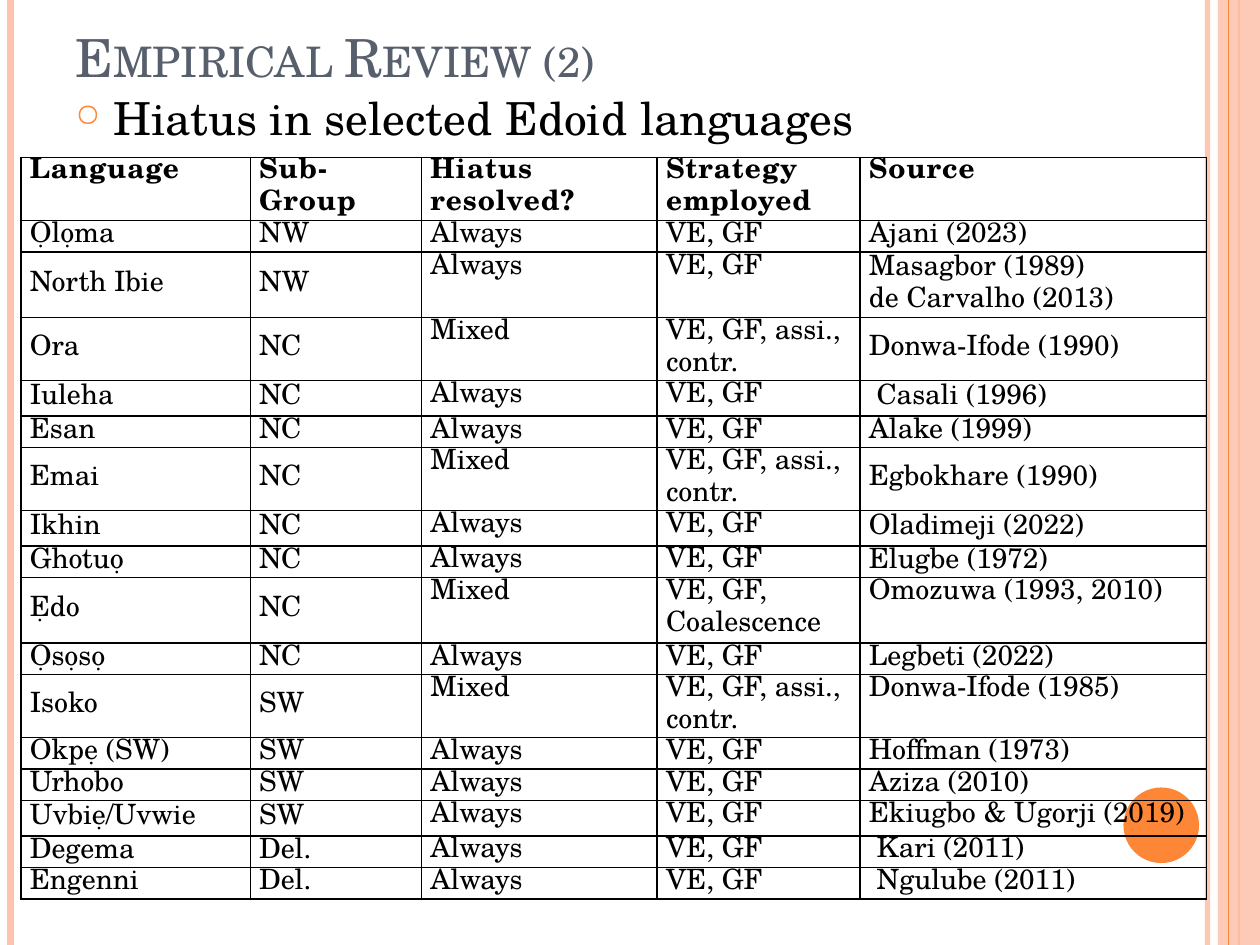
from lxml import etree
from pptx import Presentation, util as u
from pptx.dml.color import RGBColor
from pptx.enum import shapes, text
from pptx.oxml import ns

ORANGE = RGBColor(0xFE, 0x86, 0x37)
PEACH = RGBColor(0xFE, 0xC3, 0xAE)
SLATE = RGBColor(0x57, 0x5F, 0x6D)
BLACK = RGBColor(0, 0, 0)
FONT = "TeX Gyre Schola"
MIDDLE, TOP = text.MSO_ANCHOR.MIDDLE, text.MSO_ANCHOR.TOP

# The slide is a grid of 120 columns by 90 rows of equal squares
COLS, ROWS = 120, 90
GRID = u.Inches(10) // COLS

HEADINGS = ["Language", "Sub-Group", "Hiatus resolved?", "Strategy employed", "Source"]
PLAIN, ASSIMILATING = ("Always", "VE, GF"), ("Mixed", "VE, GF, assi., contr.")
COALESCING = ("Mixed", "VE, GF, Coalescence")
LANGUAGES = [
    # language, sub-group, hiatus and strategy, source, row height
    ("Ọlọma", "NW", PLAIN, "Ajani (2023)", 0.25),
    ("North Ibie", "NW", PLAIN, "Masagbor (1989)\nde Carvalho (2013)", 0.52),
    ("Ora", "NC", ASSIMILATING, "Donwa-Ifode (1990)", 0.5),
    ("Iuleha", "NC", PLAIN, " Casali (1996)", 0.28),
    ("Esan", "NC", PLAIN, "Alake (1999)", 0.25),
    ("Emai", "NC", ASSIMILATING, "Egbokhare (1990)", 0.5),
    ("Ikhin", "NC", PLAIN, "Oladimeji (2022)", 0.28),
    ("Ghotuọ", "NC", PLAIN, "Elugbe (1972)", 0.25),
    ("Ẹdo", "NC", COALESCING, "Omozuwa (1993, 2010)", 0.52),
    ("Ọsọsọ", "NC", PLAIN, "Legbeti (2022)", 0.25),
    ("Isoko", "SW", ASSIMILATING, "Donwa-Ifode (1985)", 0.5),
    ("Okpẹ (SW)", "SW", PLAIN, "Hoffman (1973)", 0.25),
    ("Urhobo", "SW", PLAIN, "Aziza (2010)", 0.25),
    ("Uvbiẹ/Uvwie", "SW", PLAIN, "Ekiugbo & Ugorji (2019)", 0.28),
    ("Degema", "Del.", PLAIN, " Kari (2011)", 0.25),
    ("Engenni", "Del.", PLAIN, " Ngulube (2011)", 0.25),
]
COLUMN_WIDTHS = [1.82, 1.36, 1.87, 1.61, 2.75]
HEADING_HEIGHT = 0.5
LAST_CENTRED_SOURCE = 8


def add(parent, tag, **attributes):
    """Append a DrawingML element to parent and return it."""
    return etree.SubElement(parent, ns.qn(tag), attributes)


def style(target, **values):
    for name, value in values.items():
        setattr(target, name, value)


deck = Presentation()
style(deck, slide_width=COLS * GRID, slide_height=ROWS * GRID)
slide = deck.slides.add_slide(deck.slide_layouts[6])

# Margin stripes, band and disc, from back to front
stripes = [(115, PEACH, 3, 93), (1, PEACH, 4.5, 100), (118, ORANGE, 1.5, 100),
           (116, PEACH, None, 87), (117, ORANGE, 0.75, 100)]
for column, colour, weight, opacity in stripes:
    if weight:
        stripe = slide.shapes.add_connector(
            shapes.MSO_CONNECTOR.STRAIGHT, column * GRID, 0, column * GRID, ROWS * GRID)
        stripe.line.width = u.Pt(weight)
        paint = stripe.line.fill
    else:
        stripe = slide.shapes.add_shape(
            shapes.MSO_SHAPE.RECTANGLE, column * GRID, 0, (COLS - column) * GRID, ROWS * GRID)
        stripe.shadow.inherit = False
        stripe.line.fill.background()
        paint = stripe.fill
    paint.solid()
    paint.fore_color.rgb = colour
    properties = stripe._element.spPr
    if opacity < 100:
        add(next(properties.iter(ns.qn("a:srgbClr"))), "a:alpha", val=str(opacity * 1000))
    if weight:
        add(properties, "a:effectLst")

disc = slide.shapes.add_shape(
    shapes.MSO_SHAPE.OVAL, 107 * GRID, 75 * GRID, u.Inches(0.6), u.Inches(0.6))
disc.shadow.inherit = False
disc.fill.solid()
disc.fill.fore_color.rgb = ORANGE
disc.line.fill.background()

# Title and lead line
lines = [("Empirical Review (2)", (6, 1, 98, 8), text.MSO_ANCHOR.BOTTOM, 30, SLATE),
         ("Hiatus in selected Edoid languages", (6, 8, 102, 78), TOP, 26, BLACK)]
for wording, place, anchor, size, colour in lines:
    box = slide.shapes.add_textbox(*(share * GRID for share in place))
    style(box.text_frame, word_wrap=True, vertical_anchor=anchor)
    paragraph = box.text_frame.paragraphs[0]
    run = paragraph.add_run()
    run.text = wording
    style(run.font, name=FONT, size=u.Pt(size))
    run.font.color.rgb = colour
    if colour == SLATE:
        run.font._element.set("cap", "small")
    else:
        style(paragraph, alignment=text.PP_ALIGN.JUSTIFY, space_before=u.Pt(6))
        bullet = paragraph._p.get_or_add_pPr()
        bullet.set("marL", str(u.Inches(0.3)))
        bullet.set("indent", str(-u.Inches(0.3)))
        add(add(bullet, "a:buClr"), "a:srgbClr", val=str(ORANGE))
        add(bullet, "a:buSzPct", val="70000")
        add(bullet, "a:buChar", char="○")

# Language table
records = [HEADINGS] + [(name, group, *hiatus, source)
                        for name, group, hiatus, source, _ in LANGUAGES]
heights = [HEADING_HEIGHT] + [language[-1] for language in LANGUAGES]
table = slide.shapes.add_table(
    len(records), len(HEADINGS), 2 * GRID, 15 * GRID,
    u.Inches(sum(COLUMN_WIDTHS)), u.Inches(sum(heights))).table
style(table, first_row=False, horz_banding=False)
for column, width in zip(table.columns, COLUMN_WIDTHS):
    column.width = u.Inches(width)
for row, height in zip(table.rows, heights):
    row.height = u.Inches(height)

for r, record in enumerate(records):
    for c, wording in enumerate(record):
        cell = table.cell(r, c)
        centred = r > 0 and (c < 2 or c == 4 and r <= LAST_CENTRED_SOURCE)
        style(cell, text=wording, vertical_anchor=MIDDLE if centred else TOP,
              margin_left=0, margin_right=0, margin_top=0, margin_bottom=0)
        for side in ("a:lnL", "a:lnR", "a:lnT", "a:lnB"):
            border = add(cell._tc.tcPr, side, w=str(u.Pt(1)))
            add(add(border, "a:solidFill"), "a:srgbClr", val=str(BLACK))
        cell.fill.background()
        for paragraph in cell.text_frame.paragraphs:
            paragraph.line_spacing = u.Pt(18)
            paragraph._p.get_or_add_pPr().set("marL", str(u.Inches(0.07)))
            font = paragraph.runs[0].font
            style(font, name=FONT, size=u.Pt(16), bold=r == 0)
            font.color.rgb = BLACK
            if r == 0:
                font._element.set("spc", "60")

deck.save("out.pptx")
